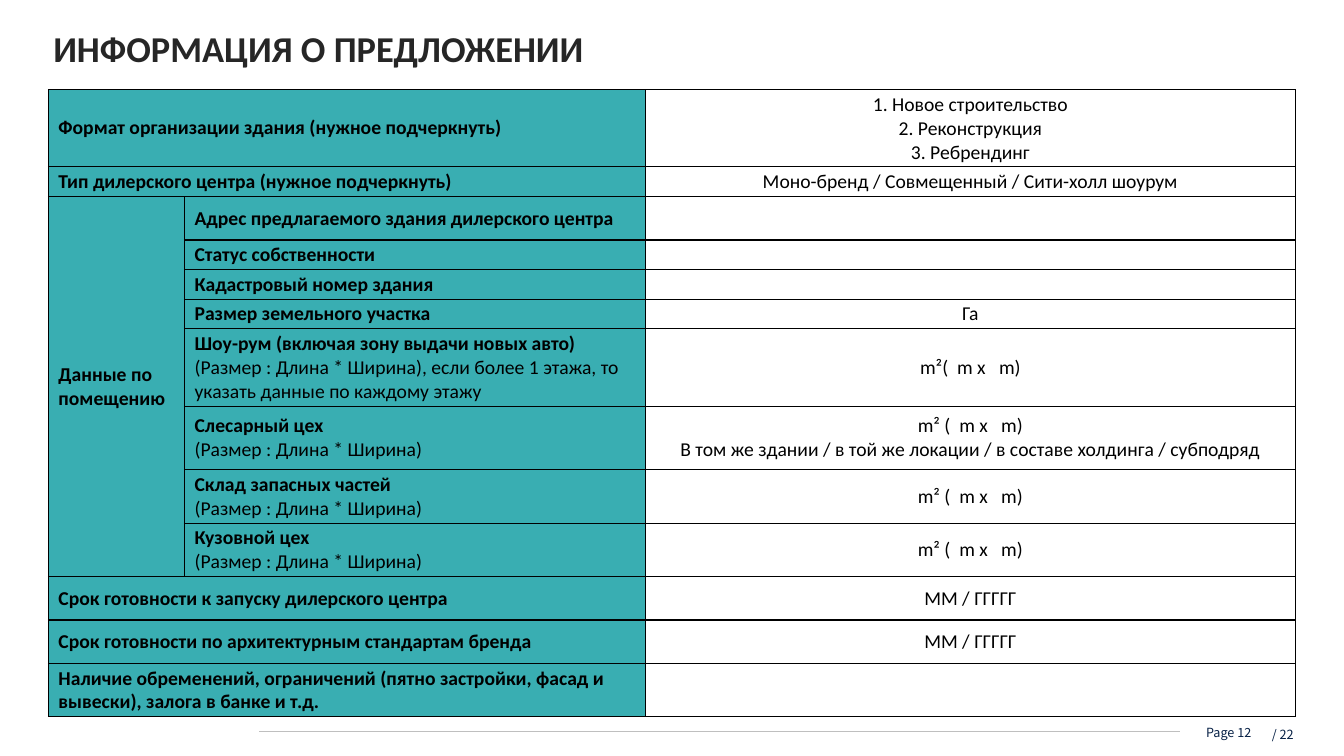
from dataclasses import dataclass

import lxml.etree
import pptx
import pptx.dml.color
import pptx.enum.shapes
import pptx.enum.text
import pptx.oxml.ns
import pptx.util

Inches = pptx.util.Inches
Pt = pptx.util.Pt
ALIGN = pptx.enum.text.PP_ALIGN
ANCHOR = pptx.enum.text.MSO_ANCHOR
qn = pptx.oxml.ns.qn


@dataclass(frozen=True)
class Theme:
    font: str = "Calibri"
    footer_font: str = "Noto Sans CJK SC"
    title_size: int = 26
    table_size: int = 14
    footer_size: int = 9
    title: str = "262626"
    ink: str = "000000"
    label_fill: str = "39AEB2"
    value_fill: str = "FFFFFF"
    footer: str = "072146"
    rule: str = "BFBFBF"


THEME = Theme()

COLUMN_WIDTHS = [1.35, 4.57, 6.45]
DIMENSIONS = "(Размер : Длина * Ширина)"
AREA = "m² (  m x   m)"
DATE = "ММ / ГГГГГ"
GROUP = "Данные по помещению"

# Each row: height, bold label, plain label note, value lines
BUILDING_ROWS = [
    (0.76, "Формат организации здания (нужное подчеркнуть)", "",
     ["1. Новое строительство", "2. Реконструкция", "3. Ребрендинг"]),
    (0.3, "Тип дилерского центра (нужное подчеркнуть)", "",
     ["Моно-бренд / Совмещенный / Сити-холл шоурум"]),
]
PREMISES_ROWS = [
    (0.43, "Адрес предлагаемого здания дилерского центра", "", []),
    (0.29, "Статус собственности", "", []),
    (0.29, "Кадастровый номер здания", "", []),
    (0.29, "Размер земельного участка", "", ["Га"]),
    (0.77, "Шоу-рум (включая зону выдачи новых авто)",
     DIMENSIONS + ", если более 1 этажа, то указать данные по каждому этажу",
     ["m²(  m x   m)"]),
    (0.63, "Слесарный цех", DIMENSIONS,
     [AREA, "В том же здании / в той же локации / в составе холдинга / субподряд"]),
    (0.53, "Склад запасных частей", DIMENSIONS, [AREA]),
    (0.53, "Кузовной цех", DIMENSIONS, [AREA]),
]
READINESS_ROWS = [
    (0.43, "Срок готовности к запуску дилерского центра", "", [DATE]),
    (0.43, "Срок готовности по архитектурным стандартам бренда", "", [DATE]),
    (0.53, "Наличие обременений, ограничений (пятно застройки, фасад и вывески), "
           "залога в банке и т.д.", "", []),
]


def rgb(value):
    return pptx.dml.color.RGBColor.from_string(value)


def format_paragraph(paragraph, font, size, color, bold=False, align=ALIGN.LEFT):
    paragraph.alignment = align
    for run in paragraph.runs:
        run.font.name = font
        run.font.size = Pt(size)
        run.font.bold = bold
        run.font.color.rgb = rgb(color)


def add_text(slide, box, text, font, size, color, bold=False, align=ALIGN.LEFT,
             inset=(0, 0), spacing=1.0, wrap=True):
    shape = slide.shapes.add_textbox(*(Inches(length) for length in box))
    frame = shape.text_frame
    frame.word_wrap = wrap
    frame.margin_left = frame.margin_right = Inches(inset[0])
    frame.margin_top = frame.margin_bottom = Inches(inset[1])
    frame.text = text
    paragraph = frame.paragraphs[0]
    paragraph.line_spacing = spacing
    format_paragraph(paragraph, font, size, color, bold, align)


def add_rule(slide, left, right, top):
    line = slide.shapes.add_connector(
        pptx.enum.shapes.MSO_CONNECTOR.STRAIGHT,
        Inches(left), Inches(top), Inches(right), Inches(top))
    line.line.color.rgb = rgb(THEME.rule)
    line.line.width = Pt(0.5)
    lxml.etree.SubElement(line._element.spPr, qn("a:effectLst"))


def style_cell(cell, fill):
    cell.vertical_anchor = ANCHOR.MIDDLE
    cell.margin_left = cell.margin_right = Inches(0.1)
    cell.margin_top = cell.margin_bottom = Inches(0.03)
    properties = cell._tc.get_or_add_tcPr()
    for side in ("a:lnL", "a:lnR", "a:lnT", "a:lnB"):
        border = lxml.etree.SubElement(properties, qn(side), w=str(Pt(1)))
        solid = lxml.etree.SubElement(border, qn("a:solidFill"))
        lxml.etree.SubElement(solid, qn("a:srgbClr"), val=THEME.ink)
    cell.fill.solid()
    cell.fill.fore_color.rgb = rgb(fill)
    # Keeps empty cells from stretching their row
    end = lxml.etree.SubElement(cell.text_frame.paragraphs[0]._p, qn("a:endParaRPr"))
    end.set("sz", str(THEME.table_size * 100))


def fill_cell(cell, lines, align=ALIGN.LEFT, bold_first=False):
    if not lines:
        return
    cell.text_frame.text = "\n".join(lines)
    for index, paragraph in enumerate(cell.text_frame.paragraphs):
        format_paragraph(paragraph, THEME.font, THEME.table_size, THEME.ink,
                         bold_first and index == 0, align)


def add_offer_table(slide):
    rows = BUILDING_ROWS + PREMISES_ROWS + READINESS_ROWS
    first = len(BUILDING_ROWS)
    last = first + len(PREMISES_ROWS) - 1
    height = sum(row[0] for row in rows)
    table = slide.shapes.add_table(
        len(rows), len(COLUMN_WIDTHS), Inches(0.48), Inches(0.89),
        Inches(sum(COLUMN_WIDTHS)), Inches(height)).table
    table.first_row = table.horz_banding = False
    for column, width in zip(table.columns, COLUMN_WIDTHS):
        column.width = Inches(width)

    for index, (row_height, label, note, values) in enumerate(rows):
        table.rows[index].height = Inches(row_height)
        label_cell, inner_cell, value_cell = table.rows[index].cells
        for cell in (label_cell, inner_cell):
            style_cell(cell, THEME.label_fill)
        style_cell(value_cell, THEME.value_fill)
        if first <= index <= last:
            label_cell = inner_cell
        else:
            label_cell.merge(inner_cell)
        fill_cell(label_cell, [label, note] if note else [label], bold_first=True)
        fill_cell(value_cell, values, ALIGN.CENTER)

    # One group label beside all premises rows
    group_cell = table.cell(first, 0)
    group_cell.merge(table.cell(last, 0))
    fill_cell(group_cell, [GROUP], bold_first=True)


def add_footer(slide):
    add_rule(slide, 2.57, 11.7, 7.26)
    style = (THEME.footer_font, THEME.footer_size, THEME.footer)
    add_text(slide, (11.05, 7.19, 1.36, 0.33), "Page 12", *style, align=ALIGN.RIGHT)
    add_text(slide, (11.87, 7.1, 1, 0.31), "/ 22", *style, align=ALIGN.RIGHT,
             inset=(0.04, 0.04), spacing=1.5)


def main():
    presentation = pptx.Presentation()
    presentation.slide_width = Inches(13.33)
    presentation.slide_height = Inches(7.5)
    slide = presentation.slides.add_slide(presentation.slide_layouts[6])

    add_footer(slide)
    add_text(slide, (0.43, 0.26, 12.18, 0.62), "ИНФОРМАЦИЯ О ПРЕДЛОЖЕНИИ",
             THEME.font, THEME.title_size, THEME.title, bold=True,
             inset=(0.1, 0.05), spacing=0.9)
    add_offer_table(slide)

    presentation.save("out.pptx")


if __name__ == "__main__":
    main()
